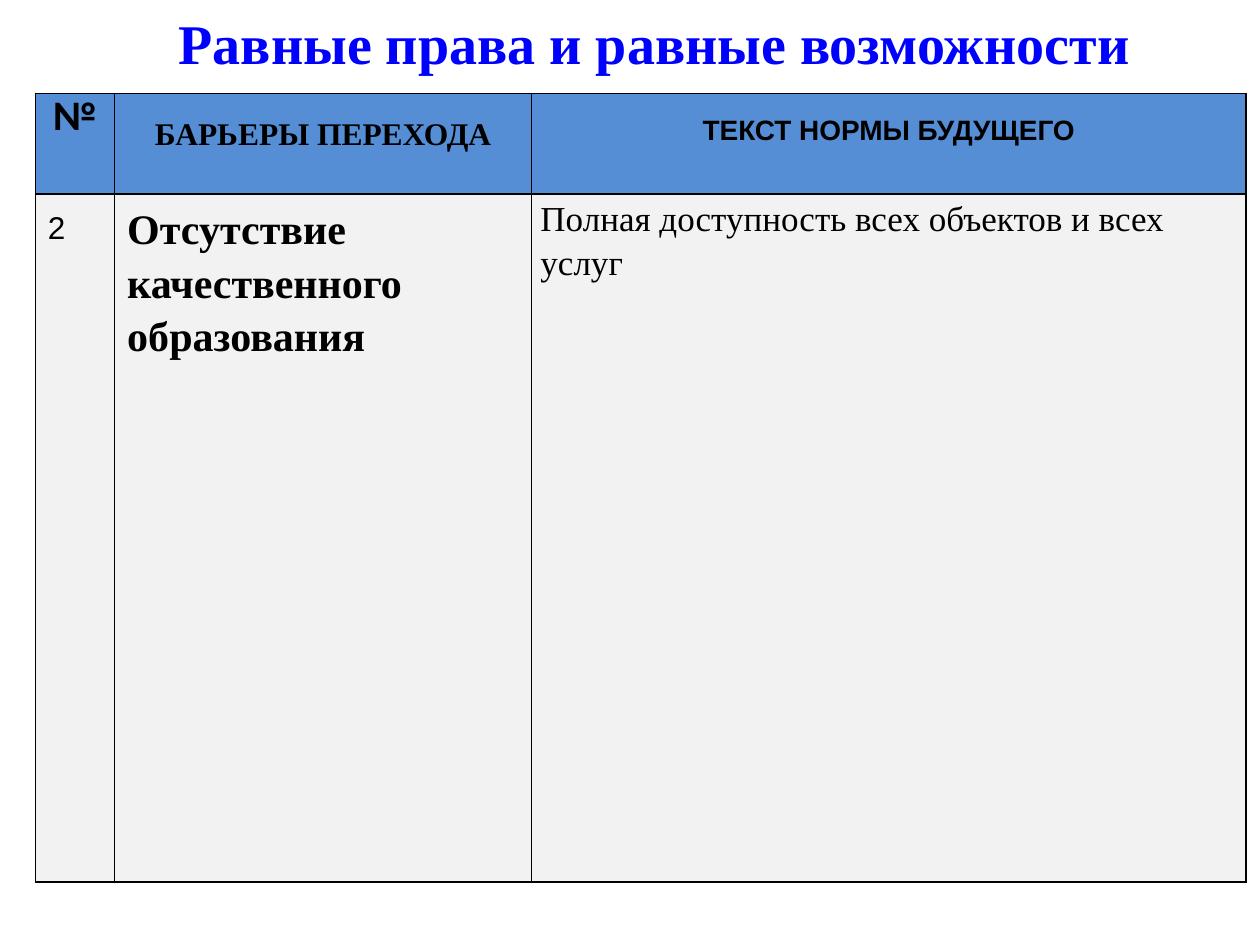
from lxml.etree import SubElement
from pptx import Presentation
from pptx.dml.color import RGBColor
from pptx.enum.text import PP_ALIGN as Align
from pptx.oxml.ns import qn
from pptx.util import Inches, Pt

BLACK = RGBColor(0x00, 0x00, 0x00)
TITLE_BLUE = RGBColor(0x00, 0x00, 0xFF)
HEADER_BLUE = RGBColor(0x55, 0x8E, 0xD5)
BODY_GREY = RGBColor(0xF2, 0xF2, 0xF2)
SERIF = "Times New Roman"

TITLE = "Равные права и равные возможности"
# text, font, size, bold, line spacing
HEADER = [
    ("№", "Calibri", 24, True, Pt(24)),
    ("БАРЬЕРЫ ПЕРЕХОДА", SERIF, 18, True, 1.5),
    ("ТЕКСТ НОРМЫ БУДУЩЕГО", "Arial", 16, True, 1.5),
]
BARRIER = [
    ("2", "Arial", 18, False, Pt(26)),
    ("Отсутствие качественного образования", SERIF, 24, True, 1.15),
    ("Полная доступность всех объектов и всех услуг", SERIF, 20, False, 1.15),
]
# cells, fill, alignment, height
ROWS = [
    (HEADER, HEADER_BLUE, Align.CENTER, 0.8),
    (BARRIER, BODY_GREY, Align.LEFT, 5.46),
]
COLUMN_WIDTHS = [0.63, 3.31, 5.67]


def write(frame, text, font_name, size, bold, color, align, spacing=1.0):
    frame.word_wrap = True
    paragraph = frame.paragraphs[0]
    paragraph.text = text
    paragraph.alignment = align
    paragraph.line_spacing = spacing
    font = paragraph.font
    font.name, font.size, font.bold = font_name, Pt(size), bold
    font.color.rgb = color


def add_borders(cell):
    properties = cell._tc.get_or_add_tcPr()
    for position, side in enumerate(("a:lnL", "a:lnR", "a:lnT", "a:lnB")):
        line = SubElement(properties, qn(side), w=str(Pt(1)))
        fill = SubElement(line, qn("a:solidFill"))
        SubElement(fill, qn("a:srgbClr"), val=str(BLACK))
        properties.insert(position, line)  # borders precede the cell fill


prs = Presentation()
prs.slide_width, prs.slide_height = Inches(10), Inches(7.5)
slide = prs.slides.add_slide(prs.slide_layouts[6])

heights = [row[-1] for row in ROWS]
table = slide.shapes.add_table(
    len(ROWS), len(COLUMN_WIDTHS), Inches(0.28), Inches(0.74),
    Inches(sum(COLUMN_WIDTHS)), Inches(sum(heights))).table
for column, width in zip(table.columns, COLUMN_WIDTHS):
    column.width = Inches(width)

for table_row, (contents, fill, align, height) in zip(table.rows, ROWS):
    table_row.height = Inches(height)
    for cell, (text, font_name, size, bold, spacing) in zip(table_row.cells, contents):
        cell.fill.solid()
        cell.fill.fore_color.rgb = fill
        add_borders(cell)
        write(cell.text_frame, text, font_name, size, bold, BLACK, align, spacing)

norm = table.cell(1, 2)
norm.margin_left = norm.margin_right = Inches(0.07)
norm.margin_top = norm.margin_bottom = 0

title = slide.shapes.add_textbox(Inches(1.18), Inches(0.02), Inches(8.03), Inches(0.57))
write(title.text_frame, TITLE, SERIF, 32, True, TITLE_BLUE, Align.CENTER)

prs.save("out.pptx")
